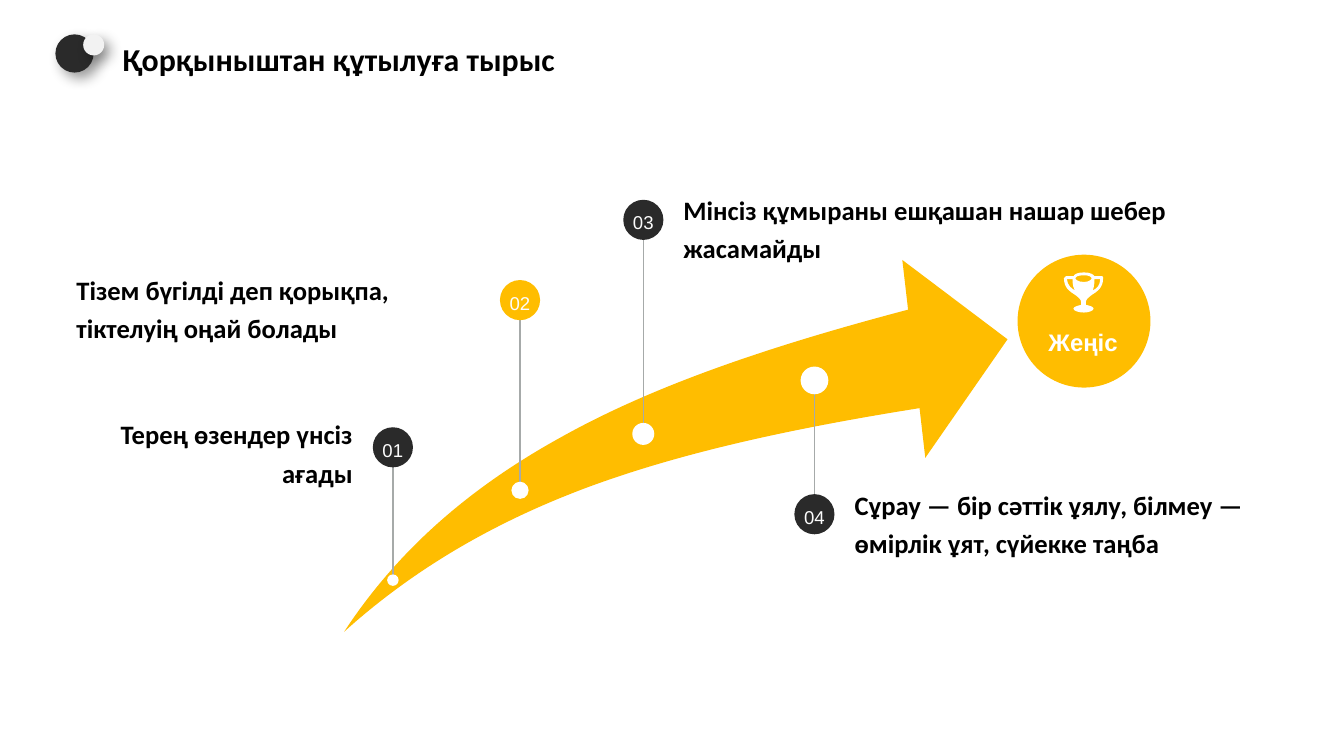
from dataclasses import dataclass

from lxml import etree
from pptx import Presentation
from pptx import util as u
from pptx.dml.color import RGBColor
from pptx.enum import shapes, text
from pptx.oxml.ns import qn

COLORS = {
    "yellow": "FFBD00", "dark": "2A2A2A", "white": "FFFFFF", "pale": "F2F2F2",
    "number": "FCFCFC", "stem": "A6AAA9", "black": "000000",
}
BADGE_SIZE = 0.42

Point = tuple[float, float]
Segment = list[Point]


@dataclass
class Style:
    size: int
    font: str = "Calibri"
    color: str = "black"
    bold: bool = True
    align: text.PP_ALIGN = text.PP_ALIGN.LEFT
    line_spacing: float = 1.2
    space_before: float = 10
    grow: bool = False


@dataclass
class Milestone:
    number: str
    x: float
    badge_y: float
    dot_y: float
    dot_size: float
    color: str
    caption: str
    caption_box: tuple[float, float, float, float]
    caption_style: Style


CAPTION = Style(20, grow=True)
RIGHT_CAPTION = Style(20, align=text.PP_ALIGN.RIGHT, space_before=4, grow=True)
NUMBER = Style(14, "Arial", "number", False, text.PP_ALIGN.CENTER)
GOAL = Style(18, "Arial", "white", True, text.PP_ALIGN.CENTER, 1.3)
TITLE = Style(24, line_spacing=1.0, space_before=4.8)

MILESTONES = [
    Milestone("01", 4.11, 4.68, 6.07, 0.12, "dark", "Терең өзендер үнсіз ағады",
              (0.58, 4.51, 3.11, 0.4), RIGHT_CAPTION),
    Milestone("02", 5.44, 3.14, 5.13, 0.18, "yellow",
              "Тізем бүгілді деп қорықпа, тіктелуің оңай болады",
              (0.8, 2.79, 4.21, 0.81), CAPTION),
    Milestone("03", 6.73, 2.3, 4.54, 0.23, "dark",
              "Мінсіз құмыраны ешқашан нашар шебер жасамайды",
              (7.15, 2.16, 5.56, 0.4), CAPTION),
    Milestone("04", 8.52, 5.38, 3.98, 0.29, "dark",
              "Сұрау — бір сәттік ұялу, білмеу — өмірлік ұят, сүйекке таңба",
              (8.94, 5.04, 4.6, 0.81), CAPTION),
]

# An outline is a list of segments: one point is a line, three points are a cubic curve.
ARROW: list[list[Segment]] = [[
    [(3.6, 6.61)],
    [(4.15, 5.77), (4.9, 5.11), (5.86, 4.58)],
    [(6.84, 4.03), (8.06, 3.62), (9.5, 3.24)],
    [(9.44, 2.72)], [(10.54, 3.55)], [(9.68, 4.79)], [(9.62, 4.27)],
    [(8.3, 4.48), (7.15, 4.73), (6.17, 5.09)],
    [(5.17, 5.46), (4.32, 5.96), (3.6, 6.61)],
]]
TROPHY: list[list[Segment]] = [
    [[(11.16, 2.92)], [(11.22, 2.92)],
     [(11.22, 2.98), (11.23, 3.02), (11.25, 3.04)],
     [(11.21, 3.02), (11.17, 2.99), (11.16, 2.92)]],
    [[(11.34, 2.88)],
     [(11.4, 2.88), (11.42, 2.9), (11.42, 2.91)],
     [(11.42, 2.92), (11.4, 2.95), (11.34, 2.95)],
     [(11.27, 2.95), (11.25, 2.92), (11.25, 2.91)],
     [(11.25, 2.9), (11.27, 2.88), (11.34, 2.88)]],
    [[(11.43, 3.04)],
     [(11.44, 3.02), (11.45, 2.98), (11.45, 2.92)],
     [(11.51, 2.92)],
     [(11.51, 2.99), (11.47, 3.02), (11.43, 3.04)]],
    [[(11.36, 3.16)],
     [(11.36, 3.13), (11.39, 3.11), (11.43, 3.08)],
     [(11.48, 3.05), (11.54, 3.01), (11.54, 2.91)],
     [(11.54, 2.9), (11.54, 2.89), (11.53, 2.89)],
     [(11.45, 2.89)],
     [(11.44, 2.87), (11.4, 2.85), (11.34, 2.85)],
     [(11.27, 2.85), (11.24, 2.87), (11.23, 2.89)],
     [(11.15, 2.89)],
     [(11.14, 2.89), (11.13, 2.9), (11.13, 2.91)],
     [(11.13, 3.01), (11.19, 3.05), (11.24, 3.08)],
     [(11.28, 3.11), (11.31, 3.13), (11.31, 3.16)],
     [(11.31, 3.19)],
     [(11.27, 3.2), (11.23, 3.21), (11.23, 3.23)],
     [(11.23, 3.25), (11.28, 3.27), (11.34, 3.27)],
     [(11.39, 3.27), (11.44, 3.25), (11.44, 3.23)],
     [(11.44, 3.21), (11.41, 3.2), (11.36, 3.19)]],
]


def rgb(name: str) -> RGBColor:
    return RGBColor.from_string(COLORS[name])


def paint(shape, color: str) -> None:
    shape.shadow.inherit = False
    shape.fill.solid()
    shape.fill.fore_color.rgb = rgb(color)
    shape.line.fill.background()


def bend(shape, segments: list[Segment]) -> None:
    """Turn the straight edges that stand for three-point segments into cubic curves."""
    edges = list(shape._element.iter(qn("a:lnTo")))
    for edge, segment in zip(edges, segments):
        if len(segment) == 3:
            edge.tag = qn("a:cubicBezTo")
            for index, (x, y) in enumerate(segment[:2]):
                control = etree.Element(qn("a:pt"), x=str(u.Inches(x) - shape.left),
                                        y=str(u.Inches(y) - shape.top))
                edge.insert(index, control)


def add_outline(page, contours: list[list[Segment]], color: str) -> None:
    builder = None
    for contour in contours:
        start, *corners = [tuple(map(u.Inches, segment[-1])) for segment in contour]
        if builder is None:
            builder = page.shapes.build_freeform(*start)
        else:
            builder.move_to(*start)
        builder.add_line_segments(corners, close=True)
    outline = builder.convert_to_shape()
    bend(outline, [segment for contour in contours for segment in contour[1:]])
    paint(outline, color)


def add_circle(page, x: float, y: float, size: float, color: str):
    """Draw a circle centred on x, y."""
    circle = page.shapes.add_shape(
        shapes.MSO_SHAPE.OVAL, u.Inches(x - size / 2), u.Inches(y - size / 2),
        u.Inches(size), u.Inches(size))
    paint(circle, color)
    return circle


def add_shadow(shape) -> None:
    effects = shape._element.spPr.find(qn("a:effectLst"))
    shadow = etree.SubElement(
        effects, qn("a:outerShdw"), blurRad=str(u.Pt(10)), dist=str(u.Pt(6)),
        dir=str(45 * 60000), algn="ctr", rotWithShape="0")
    tint = etree.SubElement(shadow, qn("a:srgbClr"), val=COLORS["black"])
    etree.SubElement(tint, qn("a:alpha"), val="40000")


def add_stem(page, x: float, start: float, end: float) -> None:
    stem = page.shapes.add_connector(
        shapes.MSO_CONNECTOR.STRAIGHT, *map(u.Inches, (x, start, x, end)))
    stem.line.color.rgb = rgb("stem")
    stem.line.width = u.Pt(1)
    etree.SubElement(stem._element.spPr, qn("a:effectLst"))


def write(frame, words: str, style: Style) -> None:
    frame.word_wrap = True
    frame.text = words
    para = frame.paragraphs[0]
    para.alignment = style.align
    para.line_spacing = style.line_spacing
    para.space_before = u.Pt(style.space_before)
    font = para.runs[0].font
    font.name, font.size, font.bold = style.font, u.Pt(style.size), style.bold
    font.color.rgb = rgb(style.color)


def add_label(page, place: tuple[float, float, float, float], words: str, style: Style) -> None:
    frame = page.shapes.add_textbox(*map(u.Inches, place)).text_frame
    frame.margin_left = frame.margin_right = frame.margin_top = frame.margin_bottom = 0
    frame.vertical_anchor = text.MSO_ANCHOR.MIDDLE
    frame.auto_size = (text.MSO_AUTO_SIZE.SHAPE_TO_FIT_TEXT if style.grow
                       else text.MSO_AUTO_SIZE.NONE)
    write(frame, words, style)


def add_milestone(page, stop: Milestone) -> None:
    add_stem(page, stop.x, stop.dot_y, stop.badge_y)
    add_circle(page, stop.x, stop.badge_y, BADGE_SIZE, stop.color)
    add_circle(page, stop.x, stop.dot_y, stop.dot_size, "white")
    add_label(page, stop.caption_box, stop.caption, stop.caption_style)
    add_label(page, (stop.x - 0.13, stop.badge_y - 0.15, 0.26, 0.31), stop.number, NUMBER)


def add_title(page, words: str) -> None:
    title = page.shapes.title
    title.left, title.top, title.width, title.height = map(u.Inches, (1.18, 0.36, 5.55, 0.4))
    title.text_frame.vertical_anchor = text.MSO_ANCHOR.TOP
    title.text_frame.auto_size = text.MSO_AUTO_SIZE.NONE
    write(title.text_frame, words, TITLE)


def main() -> None:
    deck = Presentation()
    deck.slide_width, deck.slide_height = u.Inches(14.06), u.Inches(7.91)
    page = deck.slides.add_slide(deck.slide_layouts[5])
    add_title(page, "Қорқыныштан құтылуға тырыс")
    add_outline(page, ARROW, "yellow")
    for stop in MILESTONES:
        add_milestone(page, stop)
    add_circle(page, 11.34, 3.36, 1.39, "yellow")
    add_outline(page, TROPHY, "white")
    add_label(page, (10.82, 3.33, 1.02, 0.41), "Жеңіс", GOAL)
    add_shadow(add_circle(page, 0.78, 0.56, 0.4, "dark"))
    add_shadow(add_circle(page, 0.98, 0.47, 0.22, "pale"))
    deck.save("out.pptx")


if __name__ == "__main__":
    main()
